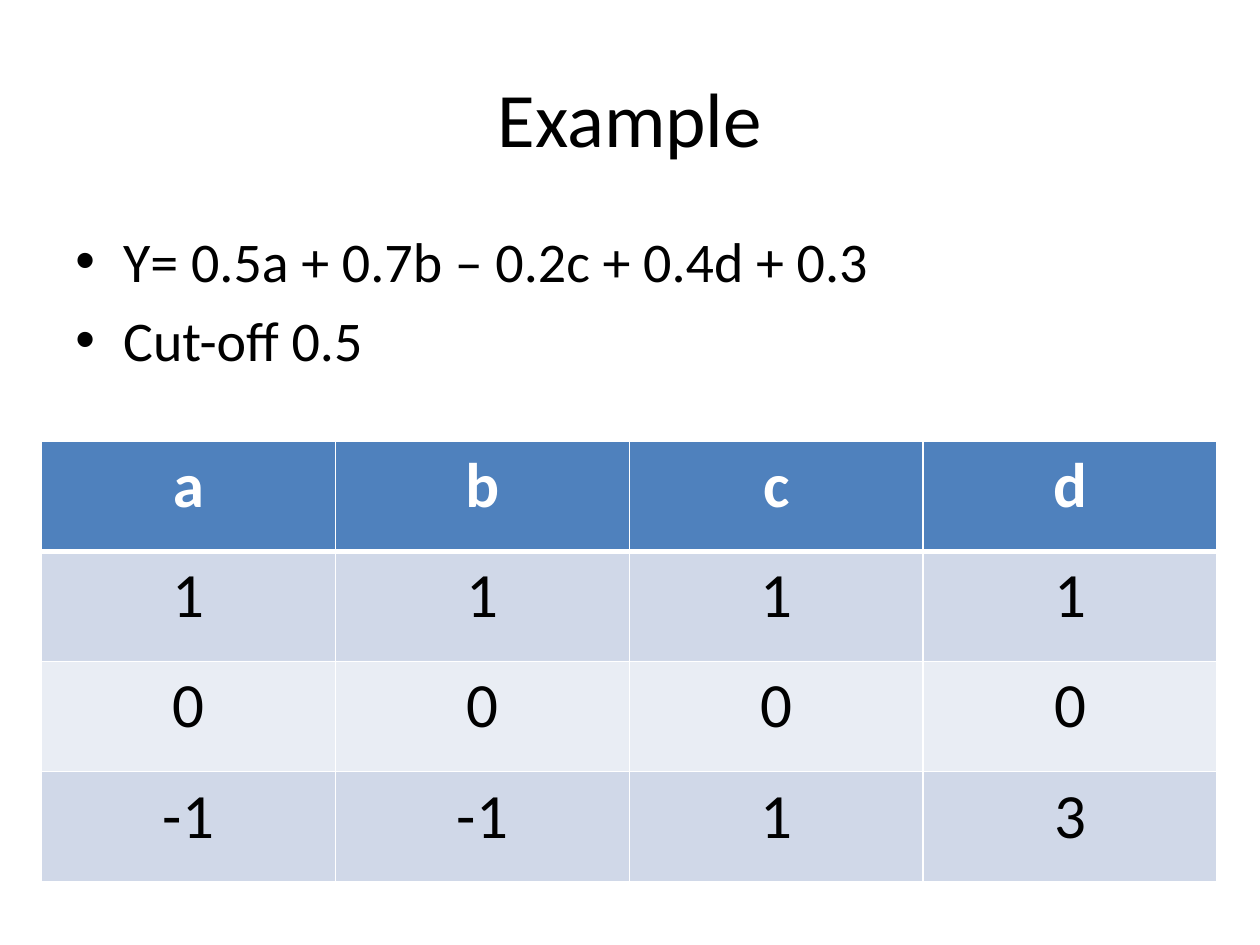
from lxml import etree
from pptx import Presentation
from pptx.dml.color import RGBColor
from pptx.enum.text import MSO_ANCHOR, PP_ALIGN
from pptx.oxml.ns import qn
from pptx.util import Inches, Pt

CENTER, LEFT = PP_ALIGN.CENTER, PP_ALIGN.LEFT
MIDDLE, TOP = MSO_ANCHOR.MIDDLE, MSO_ANCHOR.TOP
BLACK = RGBColor(0x00, 0x00, 0x00)
WHITE = RGBColor(0xFF, 0xFF, 0xFF)
HEADER = RGBColor(0x4F, 0x81, 0xBD)
BANDS = (RGBColor(0xD0, 0xD8, 0xE8), RGBColor(0xE9, 0xED, 0xF4))

ROWS = [
    ["a", "b", "c", "d"],
    ["1", "1", "1", "1"],
    ["0", "0", "0", "0"],
    ["-1", "-1", "1", "3"],
]
BULLETS = ["Y= 0.5a + 0.7b – 0.2c + 0.4d + 0.3", "Cut-off 0.5"]


def write(p, text, size, color=BLACK, bold=False, align=LEFT):
    p.alignment = align
    r = p.add_run()
    r.text = text
    r.font.color.rgb = color
    for name, value in {"name": "Calibri", "size": Pt(size), "bold": bold}.items():
        setattr(r.font, name, value)


def add_box(slide, box, anchor):
    tf = slide.shapes.add_textbox(*map(Inches, box)).text_frame
    tf.word_wrap = True
    tf.vertical_anchor = anchor
    return tf


def add_title(slide, box, text):
    write(add_box(slide, box, MIDDLE).paragraphs[0], text, 44, align=CENTER)


def add_bullets(slide, box, items):
    tf = add_box(slide, box, TOP)
    for i, item in enumerate(items):
        p = tf.add_paragraph() if i else tf.paragraphs[0]
        write(p, item, 32)
        p.space_before = Pt(6.4)
        pPr = p._p.get_or_add_pPr()
        pPr.set("marL", str(Inches(0.38)))
        pPr.set("indent", str(-Inches(0.38)))
        etree.SubElement(pPr, qn("a:buFont")).set("typeface", "Arial")
        etree.SubElement(pPr, qn("a:buChar")).set("char", "•")


def set_borders(cell, widths):
    tcPr = cell._tc.get_or_add_tcPr()
    for i, (side, width) in enumerate(widths.items()):
        ln = etree.Element(qn(f"a:ln{side}"), w=str(Pt(width)))
        fill = etree.SubElement(ln, qn("a:solidFill"))
        etree.SubElement(fill, qn("a:srgbClr")).set("val", str(WHITE))
        tcPr.insert(i, ln)


def add_grid(slide, box, rows):
    table = slide.shapes.add_table(len(rows), len(rows[0]), *map(Inches, box)).table
    for i, row in enumerate(rows):
        head = i == 0
        for j, text in enumerate(row):
            cell = table.cell(i, j)
            cell.fill.solid()
            cell.fill.fore_color.rgb = HEADER if head else BANDS[(i - 1) % 2]
            write(cell.text_frame.paragraphs[0], text, 36,
                  WHITE if head else BLACK, head, CENTER)
            set_borders(cell, {"L": 1, "R": 1, "T": 3 if i == 1 else 1,
                               "B": 3 if head else 1})


def main():
    prs = Presentation()
    prs.slide_width, prs.slide_height = Inches(10), Inches(7.5)
    slide = prs.slides.add_slide(prs.slide_layouts[6])
    add_title(slide, (0.5, 0.3, 9, 1.25), "Example")
    add_bullets(slide, (0.5, 1.75, 8.83, 5.58), BULLETS)
    add_grid(slide, (0.33, 3.5, 9.33, 3.5), ROWS)
    prs.save("out.pptx")


if __name__ == "__main__":
    main()
